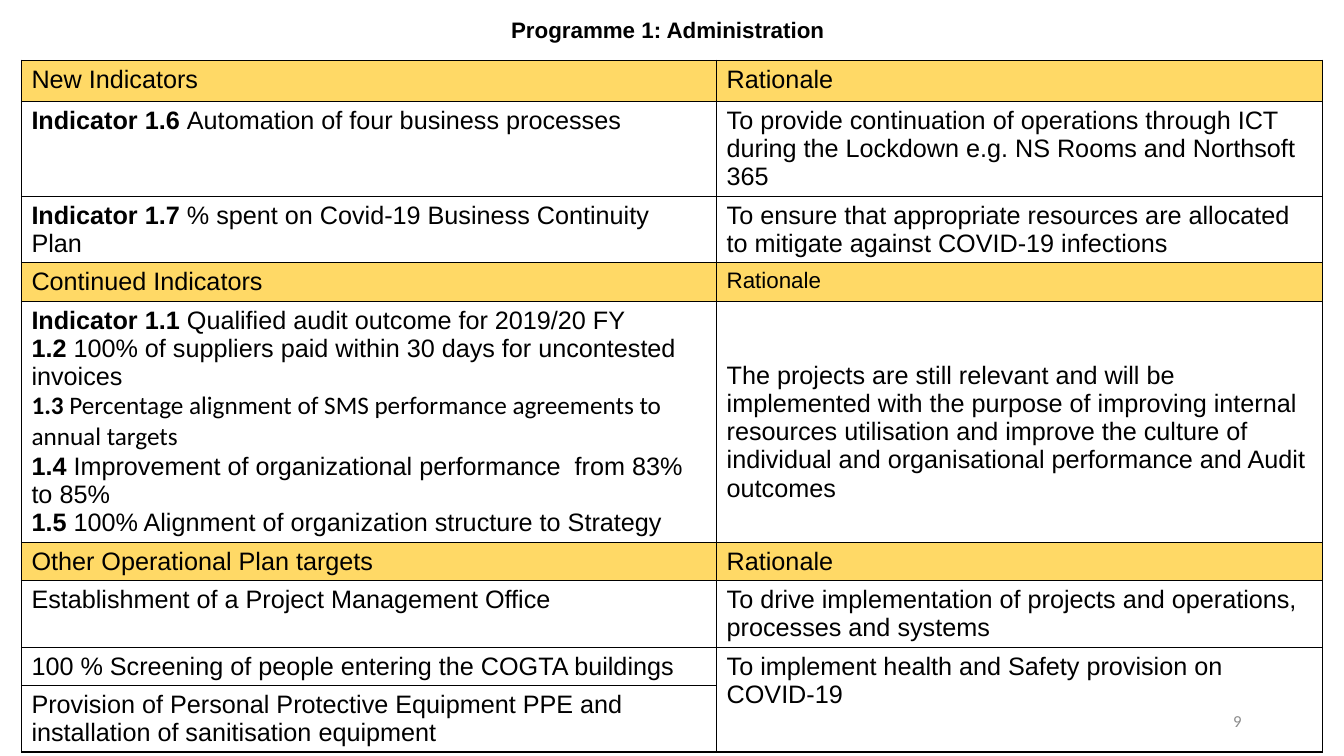
from dataclasses import dataclass

from lxml import etree
from pptx import Presentation
from pptx import util as u
from pptx.dml.color import RGBColor
from pptx.enum import text
from pptx.oxml import ns

BLACK = RGBColor(0x00, 0x00, 0x00)
GREY = RGBColor(0x8C, 0x8C, 0x8C)
GOLD = RGBColor(0xFF, 0xD9, 0x66)

TABLE_LEFT, TABLE_TOP = 15.3, 43
COLUMN_WIDTHS = (496.6, 433)


@dataclass(frozen=True)
class Entry:
    """One paragraph: a bold label followed by plain text."""
    plain: str
    label: str = ""
    font: str = "Arial"
    size: float = 18


@dataclass(frozen=True)
class Row:
    height: float
    left: tuple[Entry, ...]
    right: Entry | None
    heading: bool = False
    right_margin_top: float = 3.6


def heading_row(title: str, height: float = 27.4, rationale_size: float = 18) -> Row:
    return Row(height, (Entry(title),), Entry("Rationale", size=rationale_size), heading=True)


ROWS = (
    heading_row("New Indicators", height=29.5),
    Row(67.3, (Entry("Automation of four business processes", "Indicator 1.6 "),),
        Entry("To provide continuation of operations through ICT during the Lockdown "
              "e.g. NS Rooms and Northsoft 365")),
    Row(47.6, (Entry("% spent on Covid-19 Business Continuity Plan", "Indicator 1.7 "),),
        Entry("To ensure that appropriate resources are allocated to mitigate against "
              "COVID-19 infections")),
    heading_row("Continued Indicators", rationale_size=16),
    Row(172, (
        Entry("Qualified audit outcome for 2019/20 FY", "Indicator 1.1 "),
        Entry("100% of suppliers paid within 30 days for uncontested invoices", "1.2 "),
        Entry(" Percentage alignment of SMS performance agreements to annual targets",
              "1.3", font="Calibri"),
        Entry(" Improvement of organizational performance  from 83% to 85%", "1.4"),
        Entry(" 100% Alignment of organization structure to Strategy", "1.5"),
    ), Entry("The projects are still relevant and will be implemented with the purpose of "
             "improving internal resources utilisation and improve the culture of individual "
             "and organisational performance and Audit outcomes"), right_margin_top=43),
    heading_row("Other Operational Plan targets"),
    Row(47.6, (Entry("Establishment of a Project Management Office"),),
        Entry("To drive implementation of projects and operations, processes and systems")),
    Row(27.4, (Entry("100 % Screening of people entering the COGTA buildings"),),
        Entry("To implement health and Safety provision on COVID-19")),
    Row(47.6, (Entry("Provision of Personal Protective Equipment PPE and installation of "
                     "sanitisation equipment"),), None),
)


def add_span(para, words: str, *, font: str = "Arial", size: float = 18,
             color: RGBColor = BLACK, bold: bool = False) -> None:
    span = para.add_run()
    span.text = words
    span.font.name = font
    span.font.size = u.Pt(size)
    span.font.color.rgb = color
    span.font.bold = bold


def add_label(page, words: str, left: float, top: float, width: float, height: float,
              align: text.PP_ALIGN, **style) -> None:
    box = page.shapes.add_textbox(u.Pt(left), u.Pt(top), u.Pt(width), u.Pt(height))
    frame = box.text_frame
    frame.word_wrap = True
    frame.vertical_anchor = text.MSO_ANCHOR.MIDDLE
    para = frame.paragraphs[0]
    para.alignment = align
    add_span(para, words, **style)


def add_borders(cell) -> None:
    properties = cell._tc.get_or_add_tcPr()
    for side in ("a:lnL", "a:lnR", "a:lnT", "a:lnB"):
        line = etree.SubElement(properties, ns.qn(side), w=str(u.Pt(1)))
        fill = etree.SubElement(line, ns.qn("a:solidFill"))
        etree.SubElement(fill, ns.qn("a:srgbClr"), val=str(BLACK))


def fill_cell(cell, entries: tuple[Entry, ...], heading: bool) -> None:
    add_borders(cell)
    if heading:
        cell.fill.solid()
        cell.fill.fore_color.rgb = GOLD
    else:
        cell.fill.background()
    frame = cell.text_frame
    for index, entry in enumerate(entries):
        para = frame.add_paragraph() if index else frame.paragraphs[0]
        if entry.label:
            add_span(para, entry.label, font=entry.font, size=entry.size, bold=True)
        add_span(para, entry.plain, font=entry.font, size=entry.size)


def add_indicator_table(page) -> None:
    frame = page.shapes.add_table(
        len(ROWS), len(COLUMN_WIDTHS), u.Pt(TABLE_LEFT), u.Pt(TABLE_TOP),
        u.Pt(sum(COLUMN_WIDTHS)), u.Pt(sum(row.height for row in ROWS)))
    table = frame.table
    table.first_row = table.horz_banding = False
    for column, width in zip(table.columns, COLUMN_WIDTHS):
        column.width = u.Pt(width)
    for index, row in enumerate(ROWS):
        table.rows[index].height = u.Pt(row.height)
        left, right = table.cell(index, 0), table.cell(index, 1)
        fill_cell(left, row.left, row.heading)
        fill_cell(right, (row.right,) if row.right else (), row.heading)
        right.margin_top = u.Pt(row.right_margin_top)
        if row.right is None:
            table.cell(index - 1, 1).merge(right)


def main() -> None:
    deck = Presentation()
    deck.slide_width, deck.slide_height = u.Pt(960), u.Pt(540)
    page = deck.slides.add_slide(deck.slide_layouts[6])
    add_indicator_table(page)
    add_label(page, "9", 678, 500.4, 216, 28.8, text.PP_ALIGN.RIGHT,
              font="Calibri", size=12, color=GREY)
    add_label(page, "Programme 1: Administration", 167, 0, 620, 42.5,
              text.PP_ALIGN.CENTER, size=16, bold=True)
    deck.save("out.pptx")


if __name__ == "__main__":
    main()
